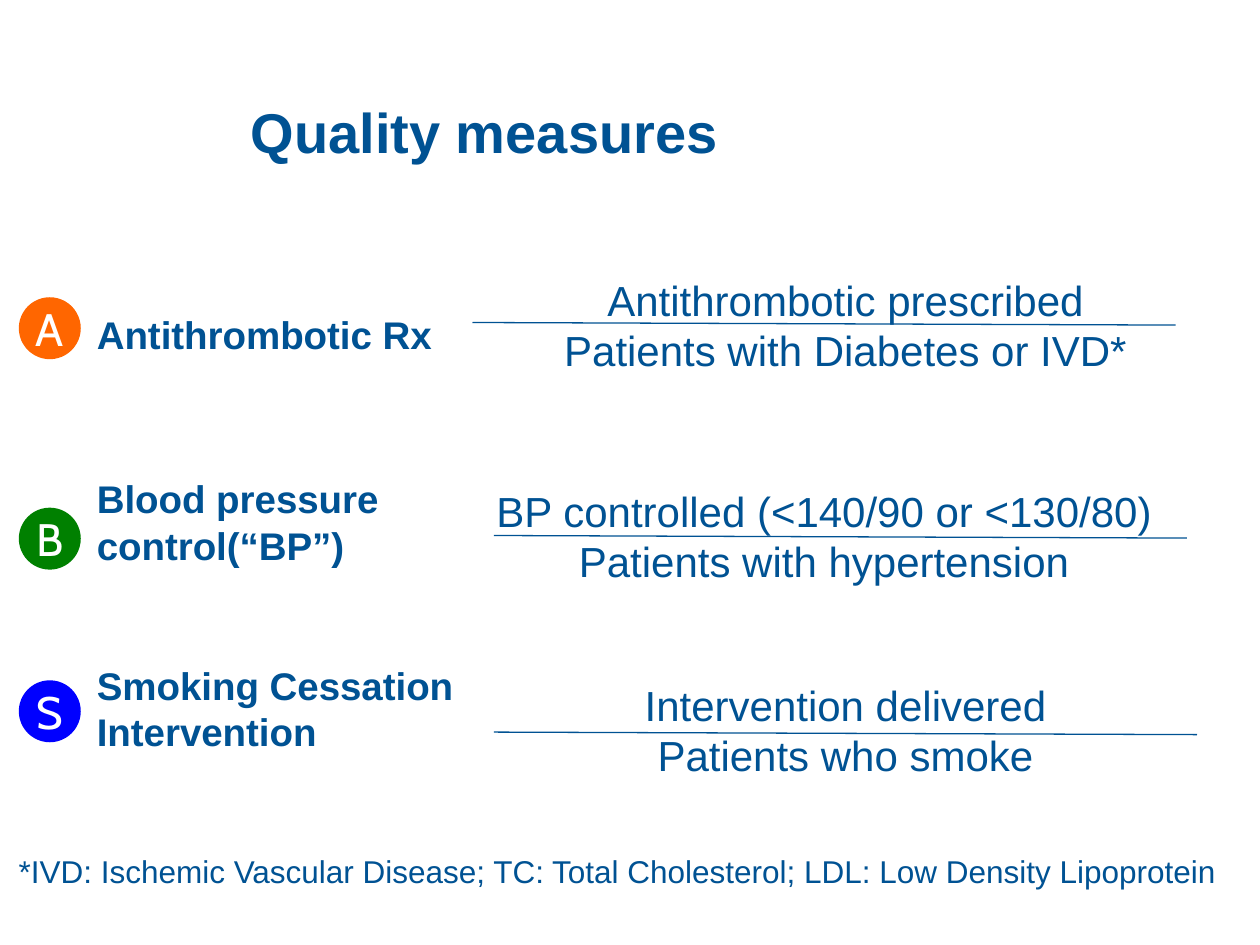
from collections import namedtuple

from lxml.etree import SubElement
from pptx import Presentation
from pptx.dml.color import RGBColor
from pptx.enum.shapes import MSO_CONNECTOR, MSO_SHAPE
from pptx.enum.text import MSO_ANCHOR, PP_ALIGN
from pptx.oxml.ns import qn
from pptx.util import Inches, Pt

SLIDE_WIDTH, SLIDE_HEIGHT = Inches(10), Inches(7.5)
BLUE = "005293"

Box = namedtuple("Box", "left top width height")
Measure = namedtuple(
    "Measure",
    "letter fill label fraction top badge_drop label_drop rule_drop rule_left rule_width fraction_left",
)

MEASURES = [
    Measure("A", "FF6600", "Antithrombotic Rx",
            ["Antithrombotic prescribed", "Patients with Diabetes or IVD*"],
            28.4, 3.33, 6.93, 5.73, 37.5, 55.8, 36.7),
    Measure("B", "008000", "Blood pressure control(“BP”)",
            ["BP controlled (<140/90 or <130/80)", "Patients with hypertension"],
            50.67, 3.33, 4.53, 6, 39.2, 55, 35),
    Measure("S", "0000FF", "Smoking Cessation Intervention",
            ["Intervention delivered", "Patients who smoke"],
            71.2, 1.07, 3.73, 6.27, 39.2, 55.8, 36.7),
]


def color(value):
    """Return the colour for a hex string."""
    return RGBColor.from_string(value)


def place(box):
    """Turn a box in percent of the slide into slide lengths."""
    return (
        int(SLIDE_WIDTH * box.left / 100),
        int(SLIDE_HEIGHT * box.top / 100),
        int(SLIDE_WIDTH * box.width / 100),
        int(SLIDE_HEIGHT * box.height / 100),
    )


def write(frame, lines, size, value=BLUE, bold=False, align=PP_ALIGN.LEFT, font="Arial"):
    """Fill a text frame with one paragraph per line."""
    for index, line in enumerate(lines):
        paragraph = frame.add_paragraph() if index else frame.paragraphs[0]
        paragraph.text = line
        paragraph.alignment = align
        paragraph.font.name = font
        paragraph.font.size = Pt(size)
        paragraph.font.bold = bold
        paragraph.font.color.rgb = color(value)


def add_text(slide, box, lines, size, anchor=MSO_ANCHOR.TOP, **style):
    """Add a wrapping text box."""
    frame = slide.shapes.add_textbox(*place(box)).text_frame
    frame.word_wrap = True
    frame.vertical_anchor = anchor
    write(frame, lines, size, **style)


def add_title(slide, box, text):
    """Place and format the title placeholder."""
    title = slide.shapes.title
    title.left, title.top, title.width, title.height = place(box)
    title.text_frame.vertical_anchor = MSO_ANCHOR.MIDDLE
    write(title.text_frame, [text], 32, bold=True)


def add_badge(slide, box, letter, fill):
    """Add a filled circle with a letter."""
    badge = slide.shapes.add_shape(MSO_SHAPE.OVAL, *place(box))
    badge.shadow.inherit = False
    badge.fill.solid()
    badge.fill.fore_color.rgb = color(fill)
    badge.line.color.rgb = color(fill)
    badge.line.width = Pt(3)
    badge.text_frame.word_wrap = False
    badge.text_frame.vertical_anchor = MSO_ANCHOR.MIDDLE
    write(badge.text_frame, [letter], 26, "FFFFFF", align=PP_ALIGN.CENTER, font="Cabin")


def add_rule(slide, box):
    """Add the fraction bar across a box."""
    left, top, width, height = place(box)
    rule = slide.shapes.add_connector(
        MSO_CONNECTOR.STRAIGHT, left, top, left + width, top + height
    )
    rule.line.color.rgb = color(BLUE)
    rule.line.width = Pt(0.75)
    SubElement(rule._element.spPr, qn("a:effectLst"))


def add_measure(slide, box, measure):
    """Add the badge, label and fraction of one measure."""
    badge_box = Box(box.left + 1.7, box.top + measure.badge_drop, 4.5, 6)
    add_badge(slide, badge_box, measure.letter, measure.fill)
    label_top = box.top + measure.label_drop - box.height / 2
    add_text(slide, Box(box.left + 6.7, label_top, 32.5, box.height), [measure.label], 22,
             anchor=MSO_ANCHOR.MIDDLE, bold=True)
    add_text(slide, Box(box.left + measure.fraction_left, box.top, 60.8, box.height),
             measure.fraction, 24, align=PP_ALIGN.CENTER)
    add_rule(slide, Box(box.left + measure.rule_left, box.top + measure.rule_drop,
                        measure.rule_width, 0.27))


def main():
    """Build and save the slide."""
    presentation = Presentation()
    presentation.slide_width, presentation.slide_height = SLIDE_WIDTH, SLIDE_HEIGHT
    slide = presentation.slides.add_slide(presentation.slide_layouts[5])
    add_title(slide, Box(18.9, 7.07, 79.3, 13.6), "Quality measures")
    for measure in MEASURES:
        add_measure(slide, Box(0, measure.top, 100, 12.13), measure)
    footnote = "*IVD: Ischemic Vascular Disease; TC: Total Cholesterol; LDL: Low Density Lipoprotein"
    add_text(slide, Box(0.5, 89.47, 98, 5.33), [footnote], 18)
    presentation.save("out.pptx")


if __name__ == "__main__":
    main()
